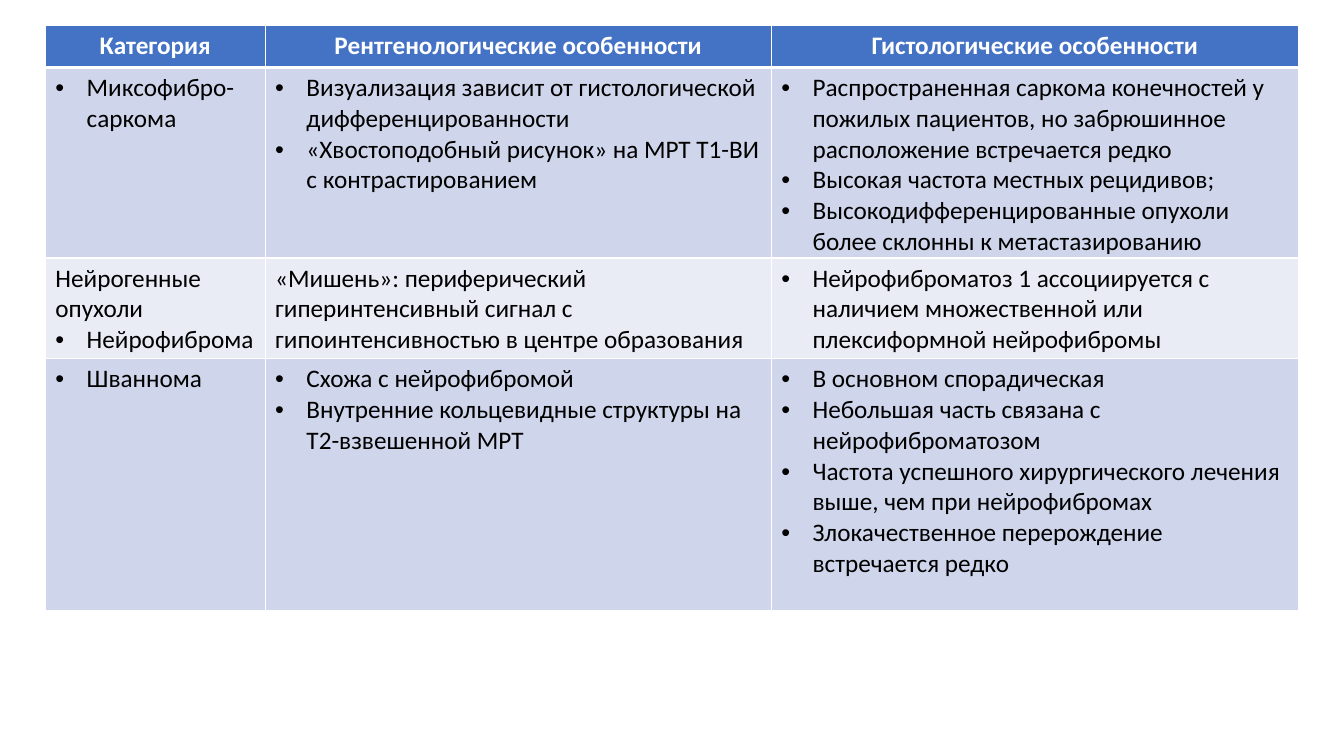
from lxml import etree
from pptx import Presentation
from pptx.dml.color import RGBColor
from pptx.enum import text
from pptx.oxml import ns
from pptx.util import Inches, Pt

COLORS = {"header": "4472C4", "odd": "CFD5EA", "even": "E9EBF5",
          "white": "FFFFFF", "black": "000000"}
COLUMN_WIDTHS = [2.18, 5.02, 5.23]
ROW_HEIGHTS = [0.42, 1.89, 1.0, 2.5]
BULLET = "• "
INDENT = Inches(0.31)
ROWS = [
    [["Категория"], ["Рентгенологические особенности"], ["Гистологические особенности"]],
    [
        ["• Миксофибро-саркома"],
        ["• Визуализация зависит от гистологической дифференцированности",
         "• «Хвостоподобный рисунок» на МРТ Т1-ВИ с контрастированием"],
        ["• Распространенная саркома конечностей у пожилых пациентов, "
         "но забрюшинное расположение встречается редко",
         "• Высокая частота местных рецидивов;",
         "• Высокодифференцированные опухоли более склонны к метастазированию"],
    ],
    [
        ["Нейрогенные опухоли", "• Нейрофиброма"],
        ["«Мишень»: периферический гиперинтенсивный сигнал "
         "с гипоинтенсивностью в центре образования"],
        ["• Нейрофиброматоз 1 ассоциируется с наличием множественной "
         "или плексиформной нейрофибромы"],
    ],
    [
        ["• Шваннома"],
        ["• Схожа с нейрофибромой",
         "• Внутренние кольцевидные структуры на Т2-взвешенной МРТ"],
        ["• В основном спорадическая",
         "• Небольшая часть связана с нейрофиброматозом",
         "• Частота успешного хирургического лечения выше, чем при нейрофибромах",
         "• Злокачественное перерождение встречается редко"],
    ],
]


def rgb(name):
    return RGBColor.from_string(COLORS[name])


def add_bullet(p):
    pPr = p._p.get_or_add_pPr()
    pPr.set("marL", str(INDENT))
    pPr.set("indent", str(-INDENT))
    etree.SubElement(pPr, ns.qn("a:buFont")).set("typeface", "Arial")
    etree.SubElement(pPr, ns.qn("a:buChar")).set("char", BULLET.strip())


def add_borders(cell, widths):
    tcPr = cell._tc.get_or_add_tcPr()
    for side, width in widths.items():
        ln = etree.SubElement(tcPr, ns.qn(f"a:ln{side}"), w=str(Pt(width)))
        fill = etree.SubElement(ln, ns.qn("a:solidFill"))
        etree.SubElement(fill, ns.qn("a:srgbClr")).set("val", COLORS["white"])


def write_cell(cell, lines, is_header):
    tf = cell.text_frame
    font = {"name": "Calibri", "size": Pt(18), "bold": is_header}
    for i, line in enumerate(lines):
        p = tf.paragraphs[0] if i == 0 else tf.add_paragraph()
        if is_header:
            p.alignment = text.PP_ALIGN.CENTER
        if line.startswith(BULLET):
            add_bullet(p)
        r = p.add_run()
        r.text = line.removeprefix(BULLET)
        for name, value in font.items():
            setattr(r.font, name, value)
        r.font.color.rgb = rgb("white" if is_header else "black")


def style_cell(cell, row):
    add_borders(cell, {"L": 1, "R": 1, "T": 3 if row == 1 else 1, "B": 3 if row == 0 else 1})
    cell.fill.solid()
    cell.fill.fore_color.rgb = rgb("header" if row == 0 else "odd" if row % 2 else "even")
    if row:
        cell.margin_bottom = 0


def add_tumor_table(s):
    frame = s.shapes.add_table(len(ROWS), len(COLUMN_WIDTHS), Inches(0.45), Inches(0.25),
                               Inches(sum(COLUMN_WIDTHS)), Inches(sum(ROW_HEIGHTS)))
    table = frame.table
    for column, width in zip(table.columns, COLUMN_WIDTHS):
        column.width = Inches(width)
    for i, (row, height) in enumerate(zip(table.rows, ROW_HEIGHTS)):
        row.height = Inches(height)
        for cell, lines in zip(row.cells, ROWS[i]):
            style_cell(cell, i)
            write_cell(cell, lines, i == 0)


def main():
    prs = Presentation()
    prs.slide_width, prs.slide_height = Inches(13.33), Inches(7.5)
    s = prs.slides.add_slide(prs.slide_layouts[6])
    add_tumor_table(s)
    prs.save("out.pptx")


if __name__ == "__main__":
    main()
